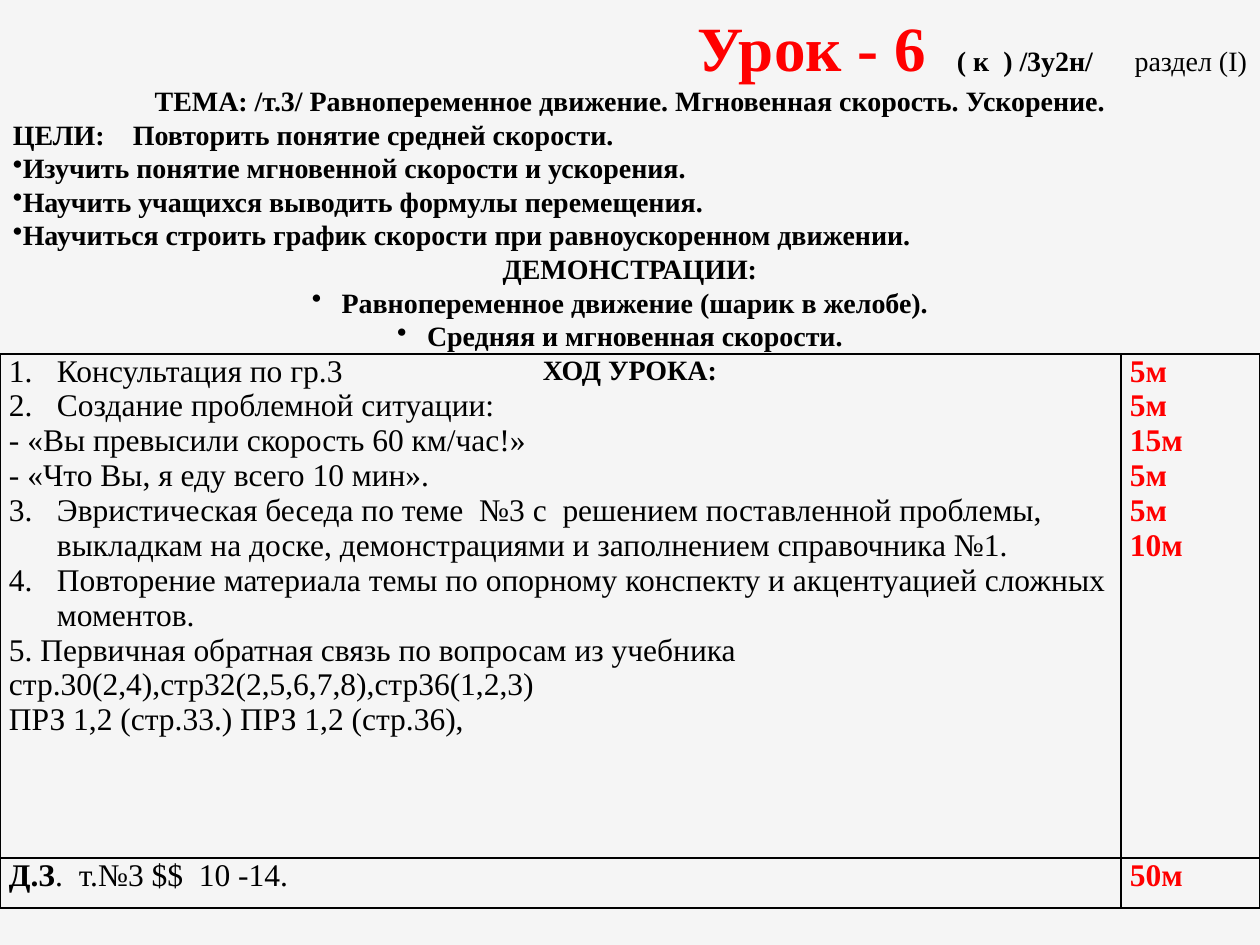
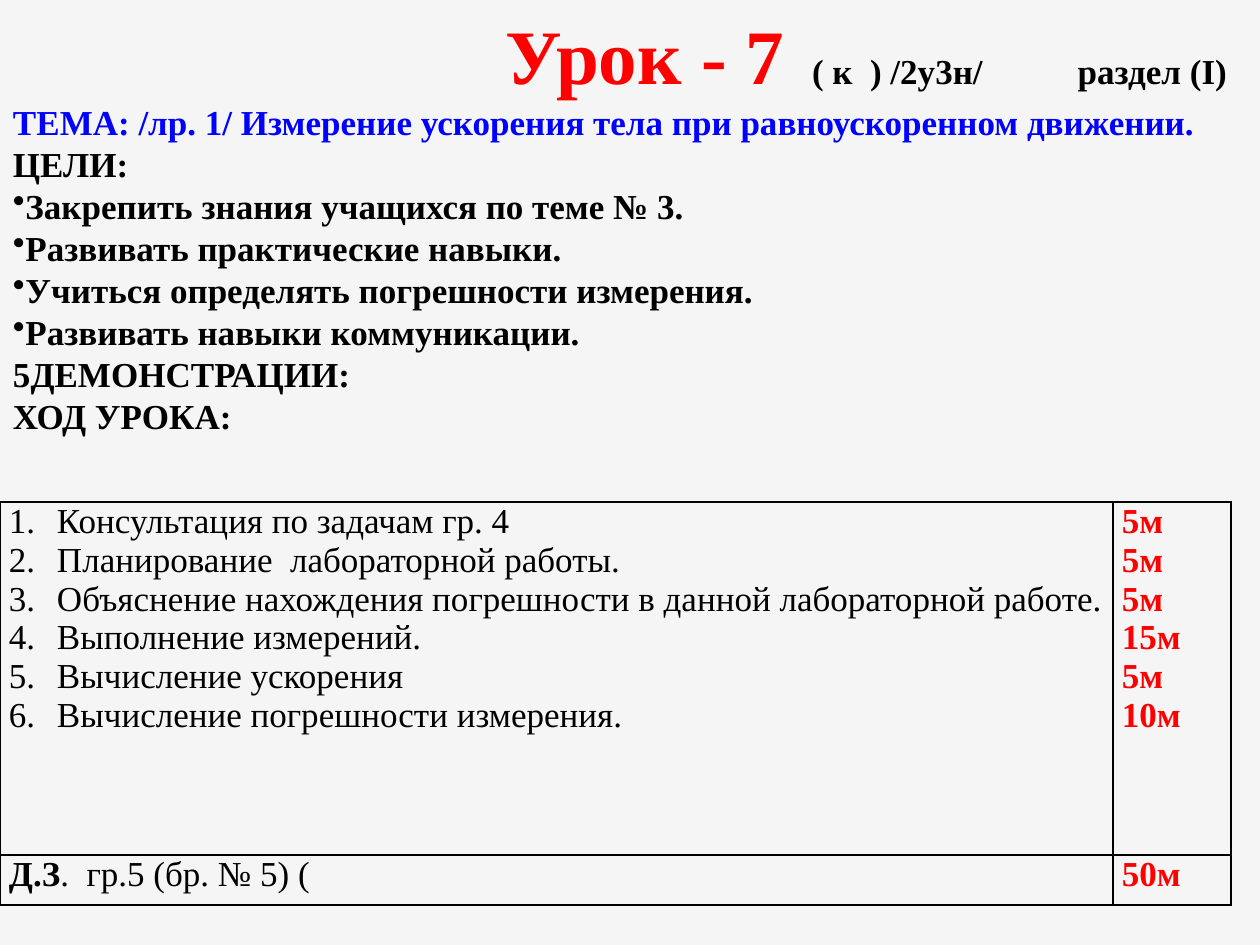
from dataclasses import dataclass
from typing import Optional

from lxml.etree import SubElement
from pptx import Presentation
from pptx.dml.color import RGBColor as Rgb
from pptx.enum.text import MSO_ANCHOR as Anchor
from pptx.enum.text import MSO_AUTO_SIZE as AutoSize
from pptx.enum.text import PP_ALIGN as Align
from pptx.oxml.ns import qn
from pptx.util import Emu, Pt

PX_PER_INCH = 126
SLIDE_W, SLIDE_H = 1260, 945


def px(length):
    return Emu(round(length * 914400 / PX_PER_INCH))


@dataclass(frozen=True)
class Theme:
    font: str = "Times New Roman"
    background: Rgb = Rgb(0xF5, 0xF5, 0xF5)
    ink: Rgb = Rgb(0, 0, 0)
    accent: Rgb = Rgb(0xFF, 0, 0)
    topic: Rgb = Rgb(0, 0, 0xFF)
    border: str = "000000"
    border_width: Emu = Pt(1)
    head_inset: int = 13
    cell_inset: int = 9
    number_indent: int = 48


THEME = Theme()


@dataclass(frozen=True)
class Span:
    text: str
    size: Optional[int] = None
    color: Optional[Rgb] = None
    bold: Optional[bool] = None


@dataclass(frozen=True)
class Line:
    spans: tuple
    size: int
    bold: bool = False
    color: Rgb = THEME.ink
    align: Align = Align.LEFT
    bullet: bool = False
    number_from: int = 0
    tabs: tuple = ()


def line(text, size, **style):
    return Line((Span(text),), size, **style)


def bold_lines(texts, size, **style):
    return [line(text, size, bold=True, **style) for text in texts]


def numbered(texts, size, start=1):
    return [line(text, size, number_from=start) for text in texts]


def title_line(title, kind, section, title_size, size, tabs):
    spans = (
        Span(f"\t{title}", title_size, THEME.accent),
        Span(f"\t{kind}"),
        section,
    )
    return Line(spans, size, bold=True, tabs=tabs)


def style_font(font, size=None, bold=None, color=None):
    if size:
        font.size = Pt(size)
    if bold is not None:
        font.bold = bold
    if color is not None:
        font.color.rgb = color


def add_marker(properties, content):
    if content.bullet:
        SubElement(properties, qn("a:buChar"), char="•")
    if content.number_from:
        indent = px(THEME.number_indent)
        properties.set("marL", str(indent))
        properties.set("indent", str(-indent))
        SubElement(
            properties,
            qn("a:buAutoNum"),
            type="arabicPeriod",
            startAt=str(content.number_from),
        )


def add_tabs(properties, tabs):
    if tabs:
        stops = SubElement(properties, qn("a:tabLst"))
        for position, side in tabs:
            SubElement(stops, qn("a:tab"), pos=str(px(position)), algn=side)


def write_lines(frame, lines):
    for index, content in enumerate(lines):
        paragraph = frame.add_paragraph() if index else frame.paragraphs[0]
        paragraph.alignment = content.align
        properties = paragraph._p.get_or_add_pPr()
        add_marker(properties, content)
        add_tabs(properties, content.tabs)
        paragraph.font.name = THEME.font
        style_font(paragraph.font, content.size, content.bold, content.color)
        for span in content.spans:
            run = paragraph.add_run()
            run.text = span.text
            style_font(run.font, span.size, span.bold, span.color)


def add_lesson_head(slide, width, height, lines):
    head = slide.shapes.add_textbox(0, 0, px(width), px(height)).text_frame
    head.word_wrap = True
    head.auto_size = AutoSize.SHAPE_TO_FIT_TEXT
    head.vertical_anchor = Anchor.MIDDLE
    head.margin_left = head.margin_right = px(THEME.head_inset)
    head.margin_top, head.margin_bottom = px(6), 0
    write_lines(head, lines)


def outline_cell(cell):
    properties = cell._tc.get_or_add_tcPr()
    for side in ("lnL", "lnR", "lnT", "lnB"):
        edge = SubElement(properties, qn(f"a:{side}"), w=str(THEME.border_width))
        fill = SubElement(edge, qn("a:solidFill"))
        SubElement(fill, qn("a:srgbClr"), val=THEME.border)


def add_lesson_plan(slide, top, widths, heights, rows):
    plan = slide.shapes.add_table(
        len(rows), len(widths), 0, px(top), px(sum(widths)), px(sum(heights))
    ).table
    plan.first_row = plan.horz_banding = False
    for column, width in zip(plan.columns, widths):
        column.width = px(width)
    for row, height, contents in zip(plan.rows, heights, rows):
        row.height = px(height)
        for cell, lines in zip(row.cells, contents):
            cell.margin_left = cell.margin_right = px(THEME.cell_inset)
            cell.margin_top = cell.margin_bottom = 0
            outline_cell(cell)
            cell.fill.background()
            write_lines(cell.text_frame, lines)


def plan_rows(steps, minutes, homework, size):
    task = Line((Span("Д.З", bold=True), Span(homework)), size)
    return [
        (steps, bold_lines(minutes, size, color=THEME.accent)),
        ([task], bold_lines(["50м"], size, color=THEME.accent)),
    ]


def add_slide(deck):
    slide = deck.slides.add_slide(deck.slide_layouts[6])
    slide.background.fill.solid()
    slide.background.fill.fore_color.rgb = THEME.background
    return slide


def add_motion_lesson(deck):
    slide = add_slide(deck)
    size = 18
    steps = [
        *numbered(["Консультация по гр.3", "Создание проблемной ситуации:"], size),
        line("- «Вы превысили скорость 60 км/час!»", size),
        line("- «Что Вы, я еду всего 10 мин».", size),
        *numbered(
            [
                "Эвристическая беседа по теме  №3 с  решением поставленной проблемы, "
                "выкладкам на доске, демонстрациями и заполнением справочника №1.",
                "Повторение материала темы по опорному конспекту и акцентуацией "
                "сложных моментов.",
            ],
            size,
            start=3,
        ),
        line(
            "5. Первичная обратная связь по вопросам из учебника "
            "стр.30(2,4),стр32(2,5,6,7,8),стр36(1,2,3)",
            size,
        ),
        line("ПРЗ 1,2 (стр.33.) ПРЗ 1,2 (стр.36),", size),
    ]
    minutes = ["5м", "5м", "15м", "5м", "5м", "10м"]
    rows = plan_rows(steps, minutes, ".  т.№3 $$  10 -14.", size)
    add_lesson_plan(slide, 354, (1121, 139), (504, 50), rows)

    size = 16
    goals = [
        "Изучить понятие мгновенной скорости и ускорения.",
        "Научить учащихся выводить формулы перемещения.",
        "Научиться строить график скорости при равноускоренном движении.",
    ]
    demos = [
        "Равнопеременное движение (шарик в желобе).",
        "Средняя и мгновенная скорости.",
    ]
    topic = "ТЕМА: /т.3/ Равнопеременное движение. Мгновенная скорость. Ускорение."
    first_goal = "ЦЕЛИ:\tПовторить понятие средней скорости."
    centred = {"align": Align.CENTER}
    add_lesson_head(slide, SLIDE_W, 388, [
        title_line(
            "Урок - 6", "( к  ) /3у2н/", Span("\tраздел (I)", bold=False), 36, size,
            ((685, "l"), (944, "l"), (1234, "r")),
        ),
        *bold_lines([topic], size, **centred),
        *bold_lines([first_goal], size, tabs=((120, "l"),)),
        *bold_lines(goals, size, bullet=True),
        *bold_lines(["ДЕМОНСТРАЦИИ:"], size, **centred),
        *bold_lines(demos, size, bullet=True, **centred),
        *bold_lines(["ХОД УРОКА:"], size, **centred),
    ])


def add_lab_lesson(deck):
    slide = add_slide(deck)
    size = 20
    steps = numbered(
        [
            "Консультация по задачам гр. 4",
            "Планирование  лабораторной работы.",
            "Объяснение нахождения погрешности в данной лабораторной работе.",
            "Выполнение измерений.",
            "Вычисление ускорения",
            "Вычисление погрешности измерения.",
        ],
        size,
    )
    minutes = ["5м", "5м", "5м", "15м", "5м", "10м"]
    rows = plan_rows(steps, minutes, ".  гр.5 (бр. № 5) (", size)
    add_lesson_plan(slide, 502, (1113, 118), (353, 50), rows)

    goals = [
        "Закрепить знания учащихся по теме № 3.",
        "Развивать практические навыки.",
        "Учиться определять погрешности измерения.",
        "Развивать навыки коммуникации.",
    ]
    topic = "ТЕМА: /лр. 1/ Измерение ускорения тела при равноускоренном движении."
    add_lesson_head(slide, 1240, 438, [
        title_line(
            "Урок - 7", "( к  ) /2у3н/", Span("\tраздел (I)"), 44, size,
            ((493, "l"), (799, "l"), (1214, "r")),
        ),
        *bold_lines([topic], size, color=THEME.topic),
        *bold_lines(["ЦЕЛИ:"], size),
        *bold_lines(goals, size, bullet=True),
        *bold_lines(["5ДЕМОНСТРАЦИИ:", "ХОД УРОКА:"], size),
    ])


def main():
    deck = Presentation()
    deck.slide_width, deck.slide_height = px(SLIDE_W), px(SLIDE_H)
    add_motion_lesson(deck)
    add_lab_lesson(deck)
    deck.save("out.pptx")


if __name__ == "__main__":
    main()
